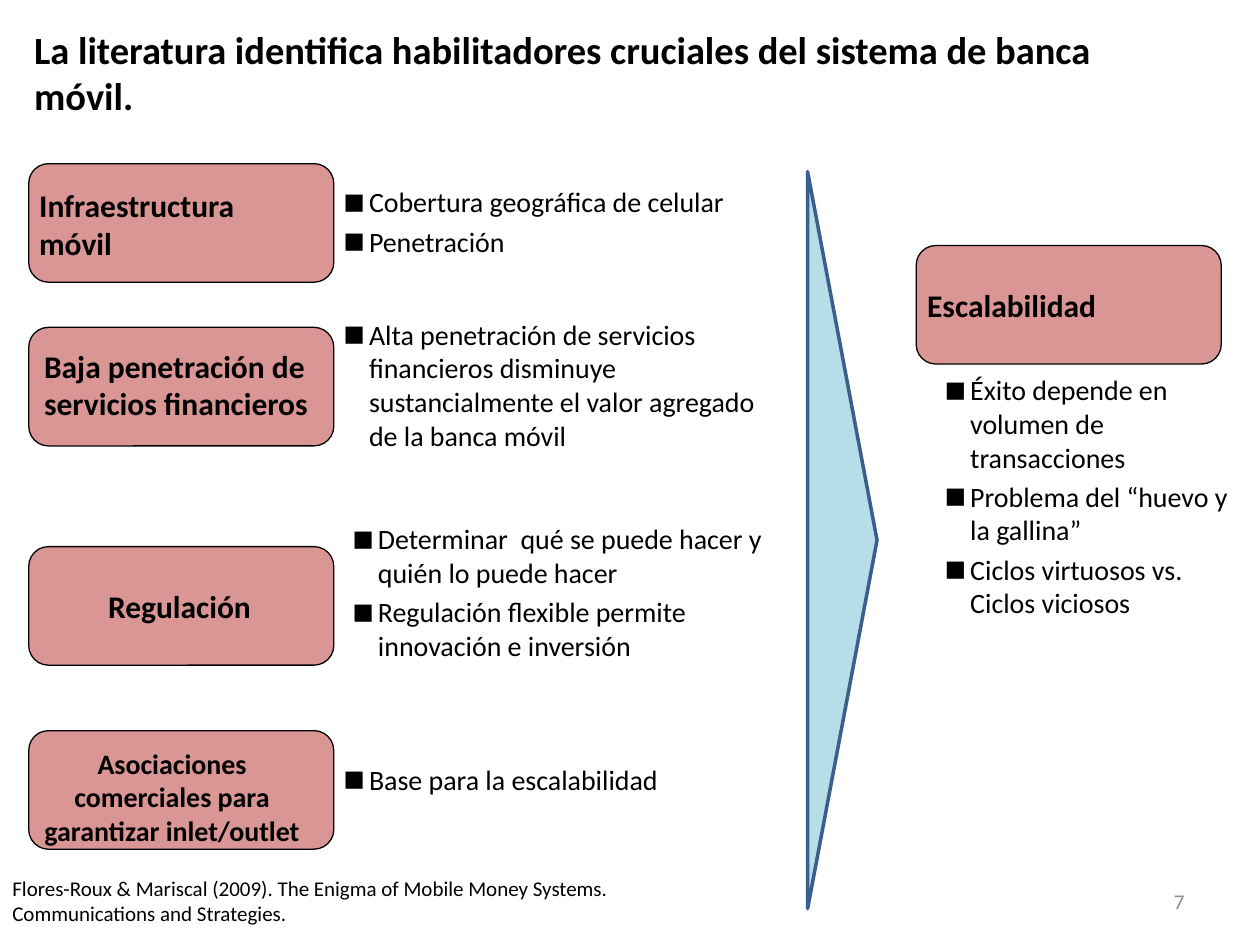
from dataclasses import dataclass

from lxml.etree import SubElement
from pptx import Presentation
from pptx.dml.color import RGBColor
from pptx.enum.shapes import MSO_SHAPE
from pptx.enum.text import MSO_ANCHOR, MSO_AUTO_SIZE, PP_ALIGN
from pptx.oxml.ns import qn
from pptx.shapes.autoshape import Shape
from pptx.slide import Slide
from pptx.text.text import TextFrame, _Paragraph
from pptx.util import Cm, Pt


@dataclass(frozen=True)
class Theme:
    """Colours, font and type sizes of the slide."""

    font: str = "Calibri"
    ink: str = "000000"
    muted: str = "8C8C8C"
    box: str = "D99694"
    arrow: str = "B7DEE8"
    arrow_line: str = "3A5F8C"
    title: int = 22
    label: int = 18
    body: int = 16
    small: int = 12


@dataclass(frozen=True)
class Area:
    """A rectangle in centimetres."""

    left: float
    top: float
    width: float
    height: float

    def lengths(self) -> tuple[Cm, Cm, Cm, Cm]:
        """Return the four measures as lengths."""
        return Cm(self.left), Cm(self.top), Cm(self.width), Cm(self.height)


@dataclass(frozen=True)
class Enabler:
    """A coloured box with its label and the points that explain it."""

    box_left: float
    box_top: float
    label: str
    label_area: Area
    points: tuple[str, ...]
    points_area: Area
    size: int = Theme.label
    alignment: PP_ALIGN = PP_ALIGN.LEFT


THEME = Theme()
BOX_WIDTH, BOX_HEIGHT = 6.15, 2.39
BOX_LEFT, POINTS_LEFT, LABEL_WIDTH = 0.58, 6.93, 5.36
INDENT = Cm(0.51)

ENABLERS = (
    Enabler(
        18.47, 4.95, "Escalabilidad", Area(18.69, 5.77, 5.51, 0.76),
        ("Éxito depende en volumen de transacciones",
         "Problema del “huevo y la gallina”",
         "Ciclos virtuosos vs. Ciclos viciosos"),
        Area(19.05, 7.52, 5.77, 5.05),
    ),
    Enabler(
        BOX_LEFT, 3.3, "Infraestructura móvil", Area(0.79, 3.76, LABEL_WIDTH, 1.55),
        ("Cobertura geográfica de celular", "Penetración"),
        Area(POINTS_LEFT, 3.73, 9.32, 1.5),
    ),
    Enabler(
        BOX_LEFT, 6.6, "Baja penetración de servicios financieros",
        Area(0.89, 6.99, LABEL_WIDTH, 1.55),
        ("Alta penetración de servicios financieros disminuye "
         "sustancialmente el valor agregado de la banca móvil",),
        Area(POINTS_LEFT, 6.4, 8.94, 2.74),
    ),
    Enabler(
        BOX_LEFT, 11.02, "Regulación", Area(0.94, 11.84, LABEL_WIDTH, 0.76),
        ("Determinar  qué se puede hacer y quién lo puede hacer",
         "Regulación flexible permite innovación e inversión"),
        Area(7.11, 10.52, 9.17, 2.87), alignment=PP_ALIGN.CENTER,
    ),
    Enabler(
        BOX_LEFT, 14.73, "Asociaciones comerciales para garantizar inlet/outlet",
        Area(0.79, 15.04, LABEL_WIDTH, 2.06),
        ("Base para la escalabilidad",),
        Area(POINTS_LEFT, 15.37, 8.94, 0.69), THEME.body, PP_ALIGN.CENTER,
    ),
)


def add_run(paragraph: _Paragraph, text: str, size: int,
            bold: bool = False, color: str = THEME.ink) -> None:
    """Append one formatted run to a paragraph."""
    run = paragraph.add_run()
    run.text = text
    run.font.name = THEME.font
    run.font.size = Pt(size)
    run.font.bold = bold
    run.font.color.rgb = RGBColor.from_string(color)


def prepare_frame(frame: TextFrame, inset: bool = False) -> None:
    """Wrap the text, fit the height and drop the margins unless inset."""
    frame.word_wrap = True
    frame.auto_size = MSO_AUTO_SIZE.SHAPE_TO_FIT_TEXT
    frame.vertical_anchor = MSO_ANCHOR.TOP
    if not inset:
        frame.margin_left = frame.margin_top = 0
        frame.margin_right = frame.margin_bottom = 0


def add_text(slide: Slide, area: Area, text: str, size: int, bold: bool = False,
             color: str = THEME.ink, alignment: PP_ALIGN = PP_ALIGN.LEFT,
             inset: bool = False) -> TextFrame:
    """Add a text box that holds a single paragraph."""
    frame = slide.shapes.add_textbox(*area.lengths()).text_frame
    prepare_frame(frame, inset)
    paragraph = frame.paragraphs[0]
    paragraph.alignment = alignment
    add_run(paragraph, text, size, bold, color)
    return frame


def add_bullet(paragraph: _Paragraph) -> None:
    """Give a paragraph a hanging square bullet."""
    properties = paragraph._p.get_or_add_pPr()
    properties.set("marL", str(INDENT))
    properties.set("indent", str(-INDENT))
    color = SubElement(properties, qn("a:buClr"))
    SubElement(color, qn("a:srgbClr"), val=THEME.ink)
    SubElement(properties, qn("a:buSzPct"), val="80000")
    SubElement(properties, qn("a:buFont"), typeface=THEME.font)
    SubElement(properties, qn("a:buChar"), char="■")
    paragraph.level = 1


def add_points(slide: Slide, area: Area, points: tuple[str, ...]) -> None:
    """Add a text box with a bulleted list."""
    frame = slide.shapes.add_textbox(*area.lengths()).text_frame
    prepare_frame(frame)
    for index, point in enumerate(points):
        paragraph = frame.add_paragraph() if index else frame.paragraphs[0]
        add_bullet(paragraph)
        if index:
            paragraph.space_before = Pt(0.2 * THEME.body)
        add_run(paragraph, point, THEME.body)


def add_figure(slide: Slide, kind: MSO_SHAPE, area: Area, fill: str,
               line: str, width: float) -> Shape:
    """Add a filled and outlined preset shape without a shadow."""
    shape = slide.shapes.add_shape(kind, *area.lengths())
    shape.shadow.inherit = False
    shape.fill.solid()
    shape.fill.fore_color.rgb = RGBColor.from_string(fill)
    shape.line.color.rgb = RGBColor.from_string(line)
    shape.line.width = Pt(width)
    return shape


def add_enabler(slide: Slide, enabler: Enabler) -> None:
    """Draw the box, label and points of an enabler."""
    area = Area(enabler.box_left, enabler.box_top, BOX_WIDTH, BOX_HEIGHT)
    add_figure(slide, MSO_SHAPE.FLOWCHART_ALTERNATE_PROCESS, area,
               THEME.box, THEME.ink, 0.75)
    add_text(slide, enabler.label_area, enabler.label, enabler.size,
             bold=True, alignment=enabler.alignment)
    add_points(slide, enabler.points_area, enabler.points)


def set_title(slide: Slide, area: Area, text: str) -> None:
    """Move, fill and format the title placeholder."""
    title = slide.shapes.title
    title.left, title.top, title.width, title.height = area.lengths()
    prepare_frame(title.text_frame)
    paragraph = title.text_frame.paragraphs[0]
    paragraph.alignment = PP_ALIGN.LEFT
    add_run(paragraph, text, THEME.title, bold=True)


def main() -> None:
    """Build and save the presentation."""
    presentation = Presentation()
    presentation.slide_width, presentation.slide_height = Cm(25.4), Cm(19.05)
    slide = presentation.slides.add_slide(presentation.slide_layouts[5])
    set_title(slide, Area(0.69, 0.53, 22.73, 1.88),
              "La literatura identifica habilitadores cruciales del sistema de banca móvil.")
    for enabler in ENABLERS:
        add_enabler(slide, enabler)
    triangle = add_figure(slide, MSO_SHAPE.ISOSCELES_TRIANGLE,
                          Area(9.55, 10.19, 14.86, 1.4),
                          THEME.arrow, THEME.arrow_line, 2)
    triangle.rotation = 90
    add_text(slide, Area(0, 17.53, 12.7, 1.27),
             "Flores-Roux & Mariscal (2009). The Enigma of Mobile Money Systems. "
             "Communications and Strategies.", THEME.small, inset=True)
    number = add_text(slide, Area(18.21, 17.65, 5.92, 1.02), "7", THEME.small,
                      color=THEME.muted, alignment=PP_ALIGN.RIGHT, inset=True)
    number.auto_size = MSO_AUTO_SIZE.NONE
    number.vertical_anchor = MSO_ANCHOR.MIDDLE
    presentation.save("out.pptx")


if __name__ == "__main__":
    main()
